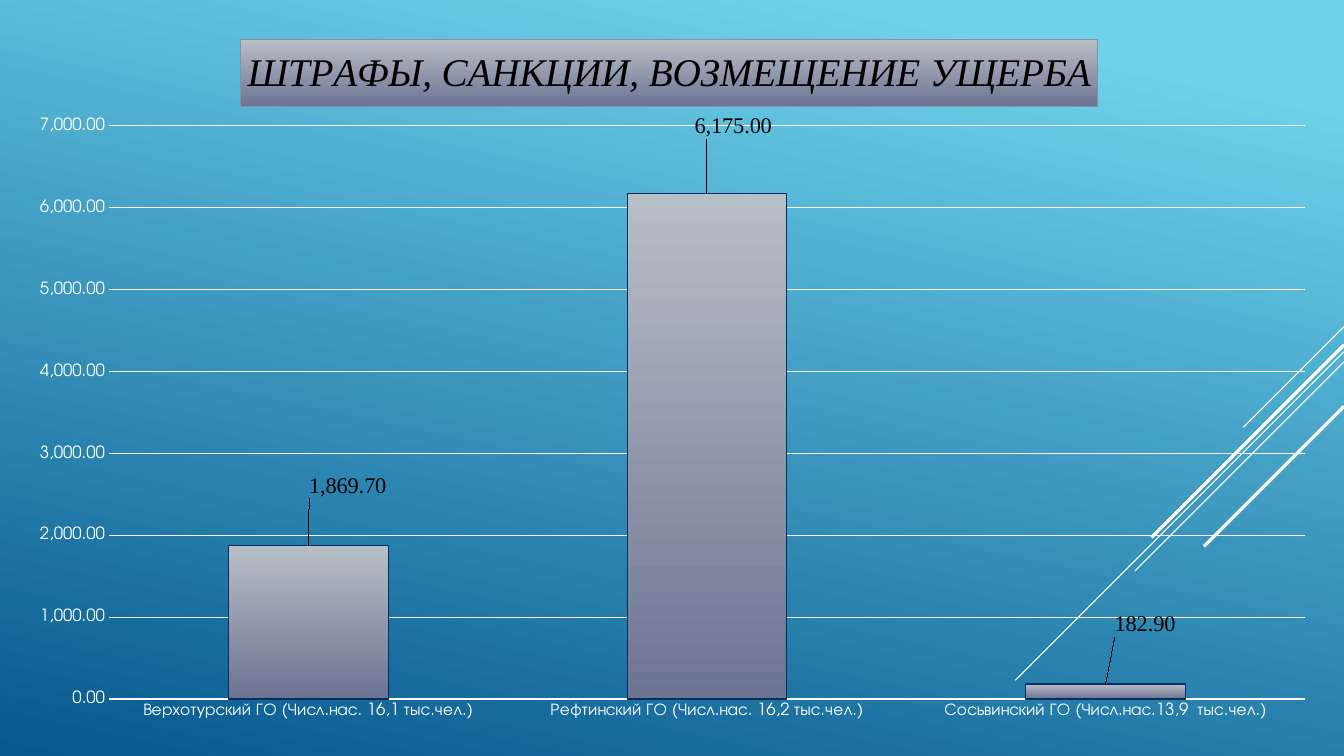
from lxml import etree
from pptx import Presentation
from pptx import util as u
from pptx.chart import data as chart_data
from pptx.dml import color
from pptx.enum import chart as ch, shapes
from pptx.oxml import parse_xml
from pptx.oxml.ns import nsdecls, qn

HEADING = "ШТРАФЫ, САНКЦИИ, ВОЗМЕЩЕНИЕ УЩЕРБА"
NUMBER = "#,##0.00"
FINES = {
    "Верхотурский ГО (Числ.нас. 16,1 тыс.чел.)": 1869.7,
    "Рефтинский ГО (Числ.нас. 16,2 тыс.чел.)": 6175,
    "Сосьвинский ГО (Числ.нас.13,9  тыс.чел.)": 182.9,
}
LABEL_SHIFTS = [(0.03, -0.06), (0.02, -0.07), (0.03, -0.06)]
RAYS = [(8.23, 2.54, 0.75), (8.86, 8.28, 0.75), (9.12, 5.27, 0.75),
        (8.69, 4.85, 2.25), (10.24, 3.53, 2.25)]
WIDTH, HEIGHT = 33.87, 19.05


def rgb(code):
    return color.RGBColor.from_string(code)


def apply(target, values):
    for name, value in values.items():
        setattr(target, name, value)


class FinesSlide:
    white, black, frame, outline = "FFFFFF", "000000", "8C8F9E", "052E5F"
    sky = [(0.1, "6ED2EB"), (1, "06588E")]
    steel = [(0, "B8BEC6"), (1, "6C7493")]
    sans, serif = "TeX Gyre Adventor", "Times New Roman"

    def __init__(self, deck):
        self.slide = deck.slides.add_slide(deck.slide_layouts[6])

    def gradient(self, fill, stops, angle):
        fill.gradient()
        fill.gradient_angle = angle
        for stop, (position, code) in zip(fill.gradient_stops, stops):
            stop.position = position
            stop.color.rgb = rgb(code)

    def line(self, line, code, points=0.75):
        line.color.rgb = rgb(code)
        line.width = u.Pt(points)

    def font(self, font, size, code, name, **extra):
        apply(font, {"size": u.Pt(size), "name": name, "bold": False, **extra})
        font.color.rgb = rgb(code)

    def layout(self, parent, index, **places):
        for old in parent.findall(qn("c:layout")):
            parent.remove(old)
        layout = parse_xml(f"<c:layout {nsdecls('c')}><c:manualLayout/></c:layout>")
        for name, value in places.items():
            etree.SubElement(layout[0], qn(f"c:{name}")).set("val", str(value))
        parent.insert(index, layout)

    def background(self):
        self.gradient(self.slide.background.fill, self.sky, 258)

    def ray(self, top, run, points):
        ray = self.slide.shapes.add_connector(
            shapes.MSO_CONNECTOR.STRAIGHT,
            u.Cm(WIDTH), u.Cm(top), u.Cm(WIDTH - run), u.Cm(top + run))
        self.line(ray.line, self.white, points)
        etree.SubElement(ray.line._get_or_add_ln().getparent(), qn("a:effectLst"))

    def heading(self, chart):
        chart.has_title = True
        title = chart.chart_title
        title.include_in_layout = False
        title.text_frame.text = HEADING
        self.font(title.text_frame.paragraphs[0].runs[0].font,
                  28, self.black, self.serif, italic=True)
        self.gradient(title.format.fill, self.steel, 270)
        self.line(title.format.line, self.frame)
        self.layout(chart._chartSpace.xpath("c:chart/c:title")[0], 1,
                    xMode="edge", yMode="edge", x=0.17, y=0.03)

    def axis(self, axis, **values):
        apply(axis, {"major_tick_mark": ch.XL_TICK_MARK.NONE,
                     "minor_tick_mark": ch.XL_TICK_MARK.NONE, **values})
        axis.format.line.fill.background()
        self.font(axis.tick_labels.font, 12, self.white, self.sans)

    def label(self, point, shift):
        label = point.data_label
        self.font(label.font, 16, self.black, self.serif)
        label.position = ch.XL_LABEL_POSITION.OUTSIDE_END
        xml = label._get_or_add_dLbl()
        self.layout(xml, 1, x=shift[0], y=shift[1])
        xml.insert(2, parse_xml(
            f'<c:numFmt {nsdecls("c")} formatCode="{NUMBER}" sourceLinked="0"/>'))
        xml.insert(3, parse_xml(
            f'<c:spPr {nsdecls("c", "a")}><a:noFill/><a:ln w="9525"><a:solidFill>'
            f'<a:srgbClr val="{self.frame}"/></a:solidFill></a:ln></c:spPr>'))

    def columns(self):
        fines = chart_data.CategoryChartData(number_format=NUMBER)
        fines.categories = list(FINES)
        fines.add_series(HEADING, list(FINES.values()))
        chart = self.slide.shapes.add_chart(
            ch.XL_CHART_TYPE.COLUMN_CLUSTERED,
            u.Cm(0.43), u.Cm(0.46), u.Cm(33.12), u.Cm(18.06), fines).chart
        chart.has_legend = False
        self.font(chart.font, 10, self.white, self.sans)
        self.heading(chart)
        self.axis(chart.category_axis)
        self.axis(chart.value_axis, minimum_scale=0, maximum_scale=7000,
                  major_unit=1000, has_major_gridlines=True)
        apply(chart.value_axis.tick_labels,
              {"number_format": NUMBER, "number_format_is_linked": False})
        self.line(chart.value_axis.major_gridlines.format.line, self.white)
        self.layout(chart._chartSpace.xpath("c:chart/c:plotArea")[0], 0,
                    layoutTarget="inner", xMode="edge", yMode="edge",
                    x=0.07, y=0.15, w=0.91, h=0.8)

        plot = chart.plots[0]
        apply(plot, {"gap_width": 150, "vary_by_categories": False})
        bars = plot.series[0]
        self.gradient(bars.format.fill, self.steel, 270)
        self.line(bars.format.line, self.outline)
        labels = bars.data_labels
        apply(labels, {"show_value": True, "number_format": NUMBER,
                       "number_format_is_linked": False})
        self.font(labels.font, 16, self.black, self.serif)
        for index, shift in enumerate(LABEL_SHIFTS):
            self.label(bars.points[index], shift)


def main():
    deck = Presentation()
    apply(deck, {"slide_width": u.Cm(WIDTH), "slide_height": u.Cm(HEIGHT)})
    page = FinesSlide(deck)
    page.background()
    for ray in RAYS:
        page.ray(*ray)
    page.columns()
    deck.save("out.pptx")


if __name__ == "__main__":
    main()
